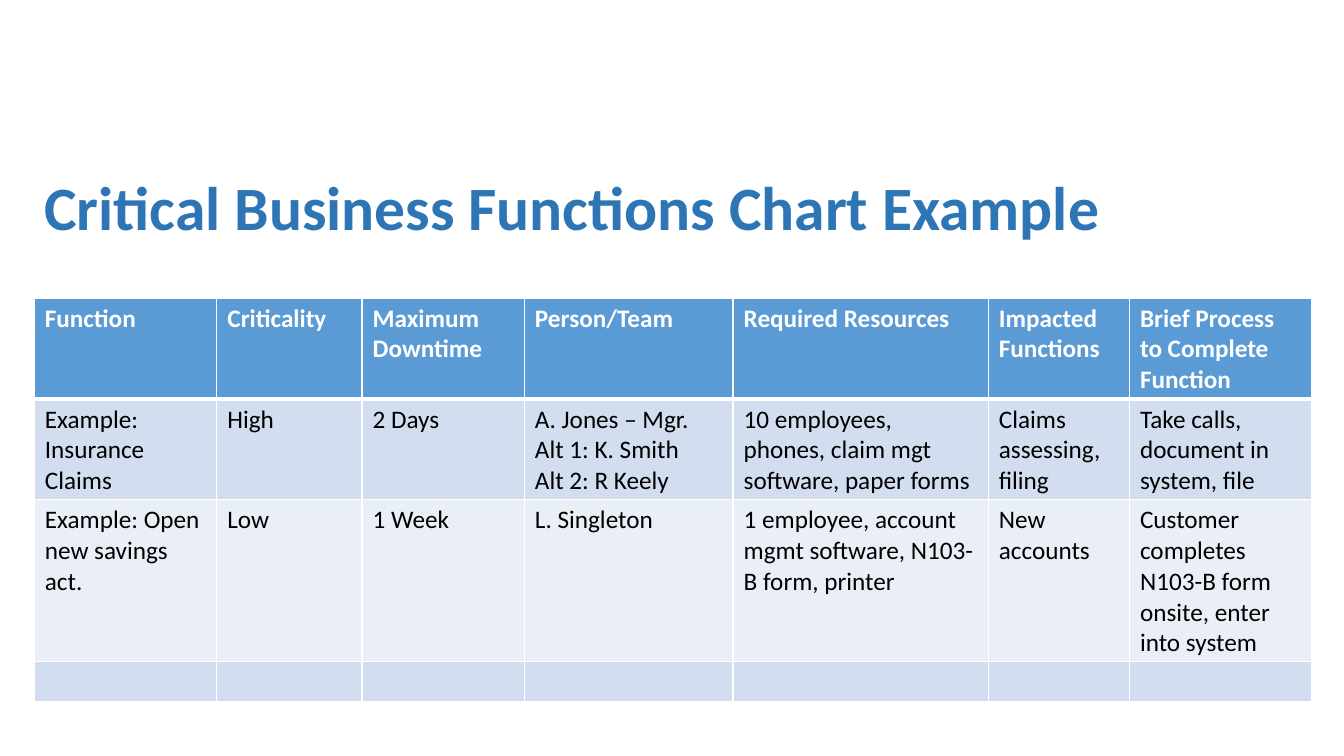
import pptx
import pptx.dml.color
import pptx.enum.text
import pptx.oxml.ns
import pptx.util
from lxml import etree

Pt = pptx.util.Pt
FONT = "Calibri"
COLORS = {
    "title": "2E75B6",
    "header": "5B9BD5",
    "band_dark": "D2DEEF",
    "band_light": "EAEFF7",
    "white": "FFFFFF",
    "text": "000000",
}
COL_WIDTHS = [130.3, 103.7, 115.9, 149, 182.2, 100.8, 130.3]
ROWS = [
    ["Function", "Criticality", "Maximum Downtime", "Person/Team",
     "Required Resources", "Impacted Functions",
     "Brief Process to Complete Function"],
    ["Example: Insurance Claims", "High", "2 Days",
     "A. Jones – Mgr.\nAlt 1: K. Smith\nAlt 2: R Keely",
     "10 employees, phones, claim mgt software, paper forms",
     "Claims assessing, filing", "Take calls, document in system, file"],
    ["Example: Open new savings act.", "Low", "1 Week", "L. Singleton",
     "1 employee, account mgmt software, N103-B form, printer",
     "New accounts",
     "Customer completes N103-B form onsite, enter into system"],
    [""] * len(COL_WIDTHS),
]


def rgb(name):
    return pptx.dml.color.RGBColor.from_string(COLORS[name])


def style_font(p, size, color, bold):
    p.font.name = FONT
    p.font.size = Pt(size)
    p.font.bold = bold
    p.font.color.rgb = rgb(color)


def add_title(slide, left, top, width, height):
    sp = slide.shapes.add_textbox(Pt(left), Pt(top), Pt(width), Pt(height))
    tf = sp.text_frame
    tf.word_wrap = True
    tf.vertical_anchor = pptx.enum.text.MSO_ANCHOR.MIDDLE
    p = tf.paragraphs[0]
    p.text = "Critical Business Functions Chart Example"
    p.line_spacing = 0.9
    style_font(p, 44, "title", True)


def set_borders(cell, top, bottom):
    qn = pptx.oxml.ns.qn
    tcPr = cell._tc.get_or_add_tcPr()
    for side, width in (("L", 1), ("R", 1), ("T", top), ("B", bottom)):
        ln = etree.SubElement(tcPr, qn(f"a:ln{side}"), w=str(Pt(width)))
        fill = etree.SubElement(ln, qn("a:solidFill"))
        etree.SubElement(fill, qn("a:srgbClr"), val=COLORS["white"])


def fill_cell(cell, text, row):
    header = row == 0
    band = "band_dark" if row % 2 else "band_light"
    set_borders(cell, 3 if row == 1 else 1, 3 if header else 1)
    cell.fill.solid()
    cell.fill.fore_color.rgb = rgb("header" if header else band)
    cell.margin_left = cell.margin_right = Pt(7.6)
    cell.margin_top = cell.margin_bottom = Pt(3.6)
    cell.text = text
    for p in cell.text_frame.paragraphs:
        style_font(p, 18, "white" if header else "text", header)


def add_functions_table(slide, left, top, width, row_height):
    frame = slide.shapes.add_table(
        len(ROWS), len(COL_WIDTHS), Pt(left), Pt(top), Pt(width),
        Pt(row_height * len(ROWS)))
    table = frame.table
    scale = width / sum(COL_WIDTHS)
    for column, col_width in zip(table.columns, COL_WIDTHS):
        column.width = Pt(col_width * scale)
    for r, texts in enumerate(ROWS):
        table.rows[r].height = Pt(row_height)
        for c, text in enumerate(texts):
            fill_cell(table.cell(r, c), text, r)


def main():
    prs = pptx.Presentation()
    prs.slide_width, prs.slide_height = Pt(960), Pt(540)
    slide = prs.slides.add_slide(prs.slide_layouts[6])
    left, width = 24.5, 912.7
    add_title(slide, left, 98, width, 104.4)
    add_functions_table(slide, left, 213, width, 29.2)
    prs.save("out.pptx")


if __name__ == "__main__":
    main()
